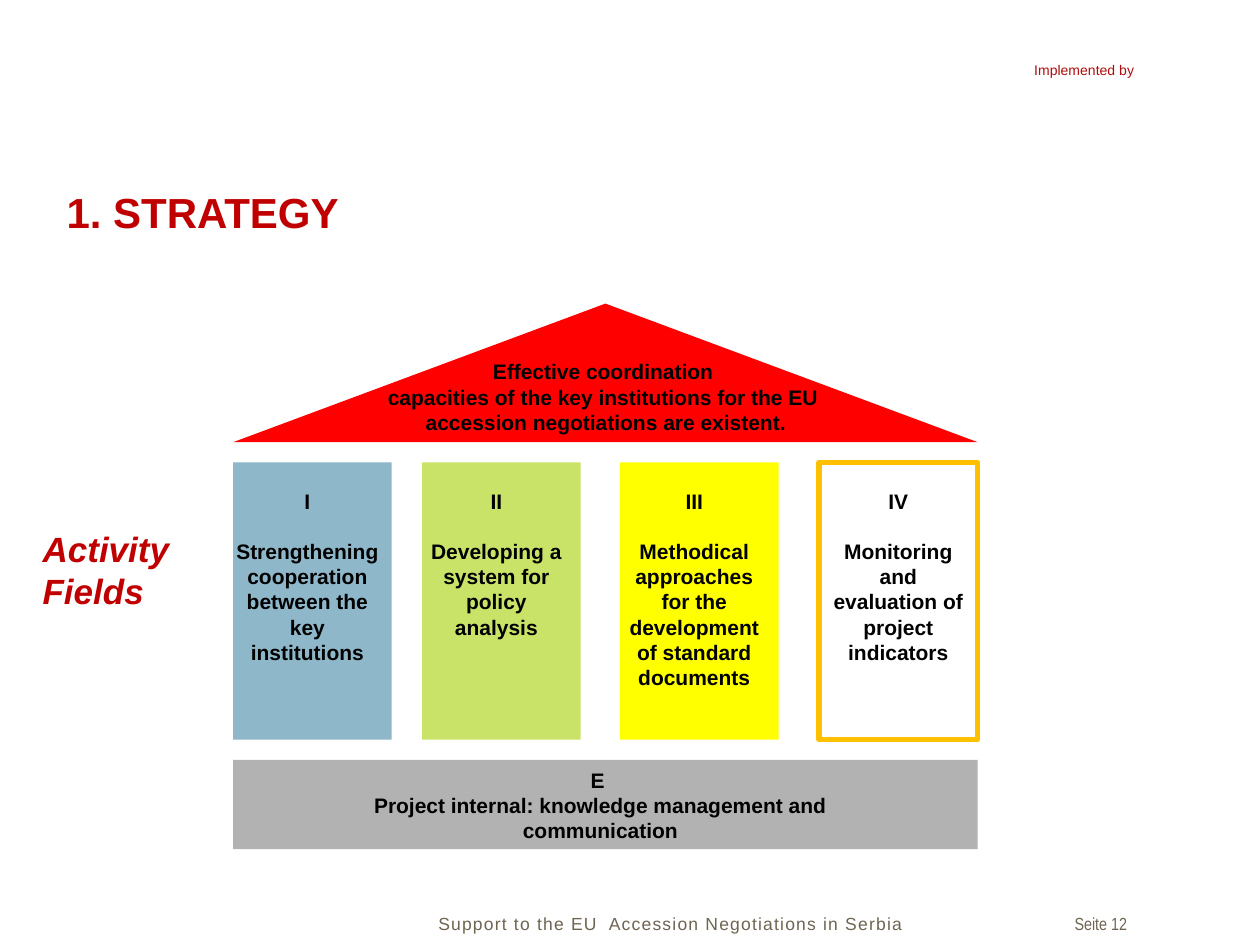
"""Build the strategy slide: a house of four activity fields."""
from pptx import Presentation
from pptx.dml.color import RGBColor as Rgb
from pptx.enum.shapes import MSO_SHAPE as Kind
from pptx.enum.text import MSO_AUTO_SIZE as Fit, PP_ALIGN as Align
from pptx.util import Inches, Pt

BLACK = Rgb(0x00, 0x00, 0x00)
BLUE = Rgb(0x8E, 0xB8, 0xCA)
GOLD = Rgb(0xFF, 0xC0, 0x00)
GRAY = Rgb(0xB2, 0xB2, 0xB2)
GREEN = Rgb(0xC9, 0xE3, 0x69)
MAROON = Rgb(0xAF, 0x0D, 0x0D)
RED = Rgb(0xFF, 0x00, 0x00)
TAUPE = Rgb(0x6E, 0x64, 0x52)
WINE = Rgb(0xC0, 0x00, 0x00)
YELLOW = Rgb(0xFF, 0xFF, 0x00)

BASE = {"name": "Arial", "size": Pt(12), "bold": True}
NOTE = {"name": "Arial", "size": Pt(10)}
HEAD = {"name": "Arial", "size": Pt(24), "bold": True}
SIDE = {"name": "Arial", "size": Pt(20), "bold": True, "italic": True}
PAGE = {"name": "Arial Narrow", "size": Pt(10)}
TAG = {"name": "Arial", "size": Pt(8)}

LEFT, WIDE = 1.85, 5.91
TOP, TALL, SPAN = 3.67, 2.2, 1.26
LINE = 0.2
PILLARS = [
    (1.85, 0.08, BLUE, "I", "Strengthening cooperation between the key institutions", 7),
    (3.35, 0.08, GREEN, "II", "Developing a system for policy analysis", 6),
    (4.92, 0.08, YELLOW, "III", "Methodical approaches for the development of standard documents", 8),
    (6.5, 0, None, "IV", "Monitoring and evaluation of project indicators", 7),
]


def add_block(slide, kind, box, fill=None, edge=None):
    """Add a plain shape with a fill or an outline."""
    shape = slide.shapes.add_shape(kind, *map(Inches, box))
    shape.shadow.inherit = False
    if fill is None:
        shape.fill.background()
    else:
        shape.fill.solid()
        shape.fill.fore_color.rgb = fill
    if edge is None:
        shape.line.fill.background()
    else:
        shape.line.color.rgb = edge
        shape.line.width = Pt(3)


def add_text(slide, box, lines, style, color, align=Align.LEFT, gap=0, track=None):
    """Add a text box with one paragraph per line."""
    frame = slide.shapes.add_textbox(*map(Inches, box)).text_frame
    frame.word_wrap = True
    frame.auto_size = Fit.SHAPE_TO_FIT_TEXT
    for i, line in enumerate(lines):
        para = frame.add_paragraph() if i else frame.paragraphs[0]
        para.alignment = align
        if i and gap:
            para.space_before = Pt(gap)
        run = para.add_run()
        run.text = line
        for key, value in style.items():
            setattr(run.font, key, value)
        run.font.color.rgb = color
        if track:
            run.font._element.set("spc", str(track))


def add_pillar(slide, left, shift, fill, mark, text, rows):
    """Add one activity field with its numeral and wording."""
    add_block(slide, Kind.RECTANGLE, (left, TOP, SPAN, TALL), fill,
              GOLD if fill is None else None)
    box = (left - shift, 3.83, SPAN + shift, 0.1 + rows * LINE)
    add_text(slide, box, [mark, text], BASE, BLACK, Align.CENTER, gap=14)


def add_house(slide):
    """Add the roof, the pillars and the base."""
    add_block(slide, Kind.ISOSCELES_TRIANGLE, (LEFT, 2.41, WIDE, 1.1), RED)
    roof = ["Effective coordination ",
            "capacities of the key institutions for the EU ",
            "accession negotiations are existent."]
    add_text(slide, (2.31, 2.8, 5, 0.71), roof, BASE, BLACK, Align.CENTER)
    for pillar in PILLARS:
        add_pillar(slide, *pillar)
    add_block(slide, Kind.RECTANGLE, (LEFT, 6.03, WIDE, 0.71), GRAY)
    base = ["E ", "Project internal: knowledge management and communication"]
    add_text(slide, (2.72, 6.04, 4.09, 0.71), base, BASE, BLACK, Align.CENTER)


def main():
    """Build and save the slide."""
    deck = Presentation()
    deck.slide_width, deck.slide_height = Inches(10), Inches(7.5)
    slide = deck.slides.add_slide(deck.slide_layouts[6])
    add_text(slide, (8.11, 0.44, 1.17, 0.24), ["Implemented by"], TAG, MAROON)
    add_text(slide, (0.43, 1.43, 8.74, 0.5), ["1. STRATEGY"], HEAD, WINE)
    add_house(slide)
    add_text(slide, (0.24, 4.14, 1.46, 0.77), ["Activity", "Fields"], SIDE, WINE)
    add_text(slide, (3.13, 7.2, 4.38, 0.27),
             ["Support to the EU  Accession Negotiations in Serbia"],
             NOTE, TAUPE, Align.CENTER, track=70)
    add_text(slide, (8.43, 7.2, 1.01, 0.27), ["Seite 12"], PAGE, TAUPE)
    deck.save("out.pptx")


if __name__ == "__main__":
    main()
